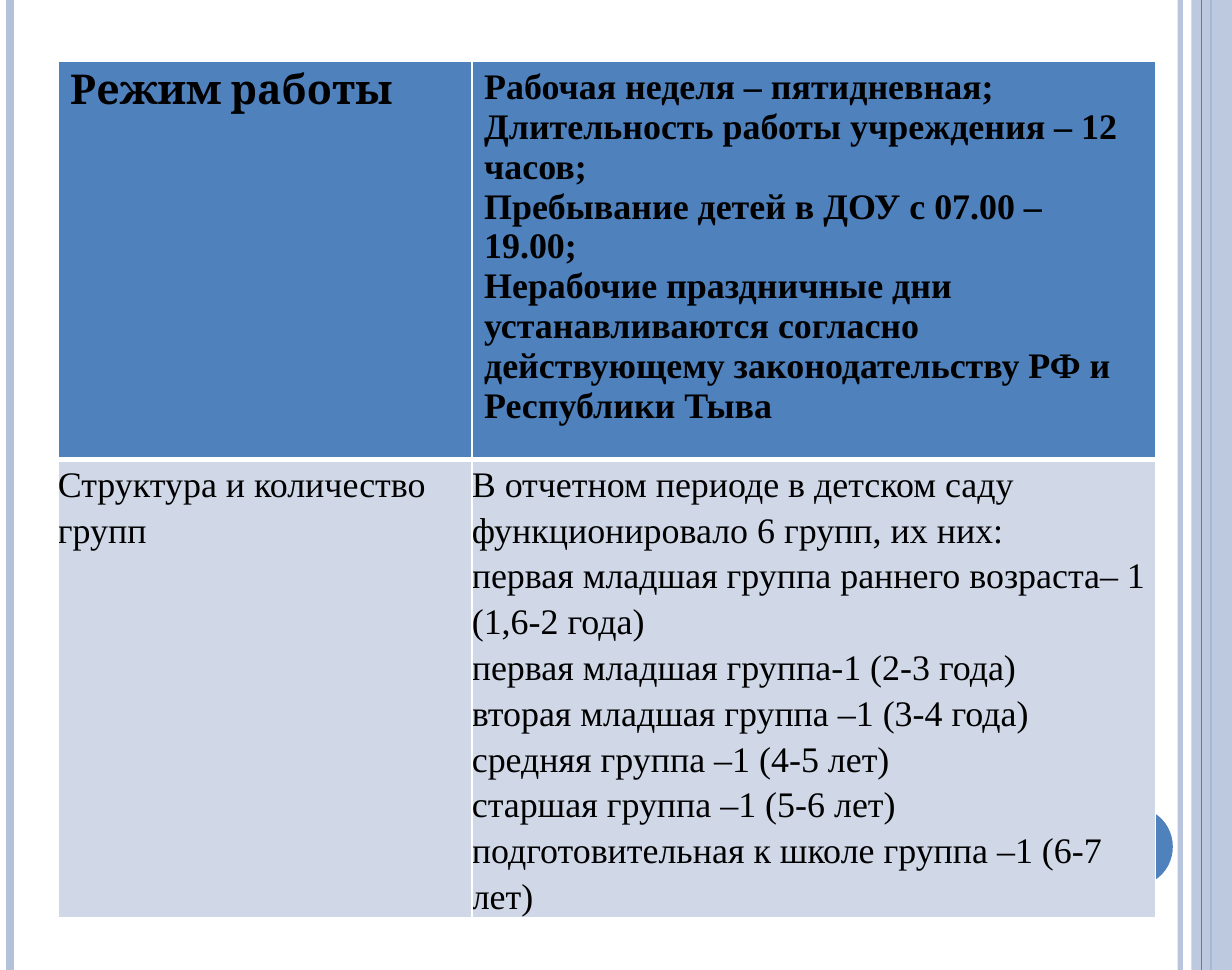
from lxml import etree
from pptx import Presentation
from pptx.dml.color import RGBColor
from pptx.enum.shapes import MSO_CONNECTOR, MSO_SHAPE
from pptx.oxml.ns import qn
from pptx.util import Inches, Pt

STRAIGHT = MSO_CONNECTOR.STRAIGHT
RECT, OVAL = MSO_SHAPE.RECTANGLE, MSO_SHAPE.OVAL
BLUE, PALE, LIGHT = "4F81BD", "B3C1DB", "D0D8E8"
SERIF = "Times New Roman"
HEIGHT = 7 + 7 / 8


def paint(fill, color, alpha=100):
    fill.solid()
    fill.fore_color.rgb = RGBColor.from_string(color)
    if alpha < 100:
        clr = fill._xPr.find(".//" + qn("a:srgbClr"))
        etree.SubElement(clr, qn("a:alpha"), val=str(alpha * 1000))


prs = Presentation()
prs.slide_width, prs.slide_height = Inches(10), Inches(HEIGHT)
s = prs.slides.add_slide(prs.slide_layouts[6])

# Side stripes, band and circle, from back to front
decor = [
    ("line", 9.58, 3, PALE, 93),
    ("line", 0.08, 4.5, PALE, 100),
    ("line", 9.83, 1.5, BLUE, 100),
    (RECT, (9.67, 0, 0.33, HEIGHT), None, PALE, 87),
    ("line", 9.75, 0.75, BLUE, 100),
    (OVAL, (8.92, 6.56, 0.6, 0.63), None, BLUE, 100),
]
for kind, place, width, color, alpha in decor:
    if kind == "line":
        x = Inches(place)
        line = s.shapes.add_connector(STRAIGHT, x, 0, x, prs.slide_height)
        line.line.width = Pt(width)
        paint(line.line.fill, color, alpha)
        etree.SubElement(line._element.spPr, qn("a:effectLst"))
    else:
        sp = s.shapes.add_shape(kind, *[Inches(v) for v in place])
        sp.shadow.inherit = False
        sp.line.fill.background()
        paint(sp.fill, color, alpha)

# Table content
rows = [
    [["Режим работы"],
     ["Рабочая неделя – пятидневная;",
      "Длительность работы учреждения – 12 часов;",
      "Пребывание детей в ДОУ с 07.00 – 19.00;",
      "Нерабочие праздничные дни устанавливаются согласно "
      "действующему законодательству РФ и Республики Тыва"]],
    [["Структура и количество групп"],
     ["В отчетном периоде в детском саду функционировало 6 групп, их них:",
      "первая младшая группа раннего возраста– 1 (1,6-2 года)",
      "первая младшая группа-1 (2-3 года)",
      "вторая младшая группа –1 (3-4 года)",
      "средняя группа –1 (4-5 лет)",
      "старшая группа –1 (5-6 лет)",
      "подготовительная к школе группа –1 (6-7 лет)"]],
]
table = s.shapes.add_table(2, 2, Inches(0.47), Inches(0.5),
                           Inches(8.91), Inches(6.47)).table
for col, width in zip(table.columns, (3.36, 5.55)):
    col.width = Inches(width)
for row, height in zip(table.rows, (3.23, 3.24)):
    row.height = Inches(height)

for i, row in enumerate(rows):
    header = i == 0
    for j, texts in enumerate(row):
        cell = table.cell(i, j)
        title = header and j == 0
        cell.margin_left = cell.margin_right = Inches(0.1 if header else 0)
        cell.margin_top = cell.margin_bottom = Inches(0.05 if header else 0)
        tf = cell.text_frame
        tf.text = "\n".join(texts)
        for p in tf.paragraphs:
            p.font.name = "Cambria" if title else SERIF
            p.font.size = Pt(24 if title else 21)
            p.font.bold = header
            paint(p.font.fill, "000000")
            if not header:
                p.line_spacing = 1.15
        # White borders, thick between the two rows
        tc_pr = cell._tc.get_or_add_tcPr()
        sides = {"L": 1, "R": 1, "T": 1 if header else 3, "B": 3 if header else 1}
        for side, width in sides.items():
            ln = etree.SubElement(tc_pr, qn("a:ln" + side), w=str(Pt(width)))
            fill = etree.SubElement(ln, qn("a:solidFill"))
            etree.SubElement(fill, qn("a:srgbClr"), val="FFFFFF")
        paint(cell.fill, BLUE if header else LIGHT)

prs.save("out.pptx")
